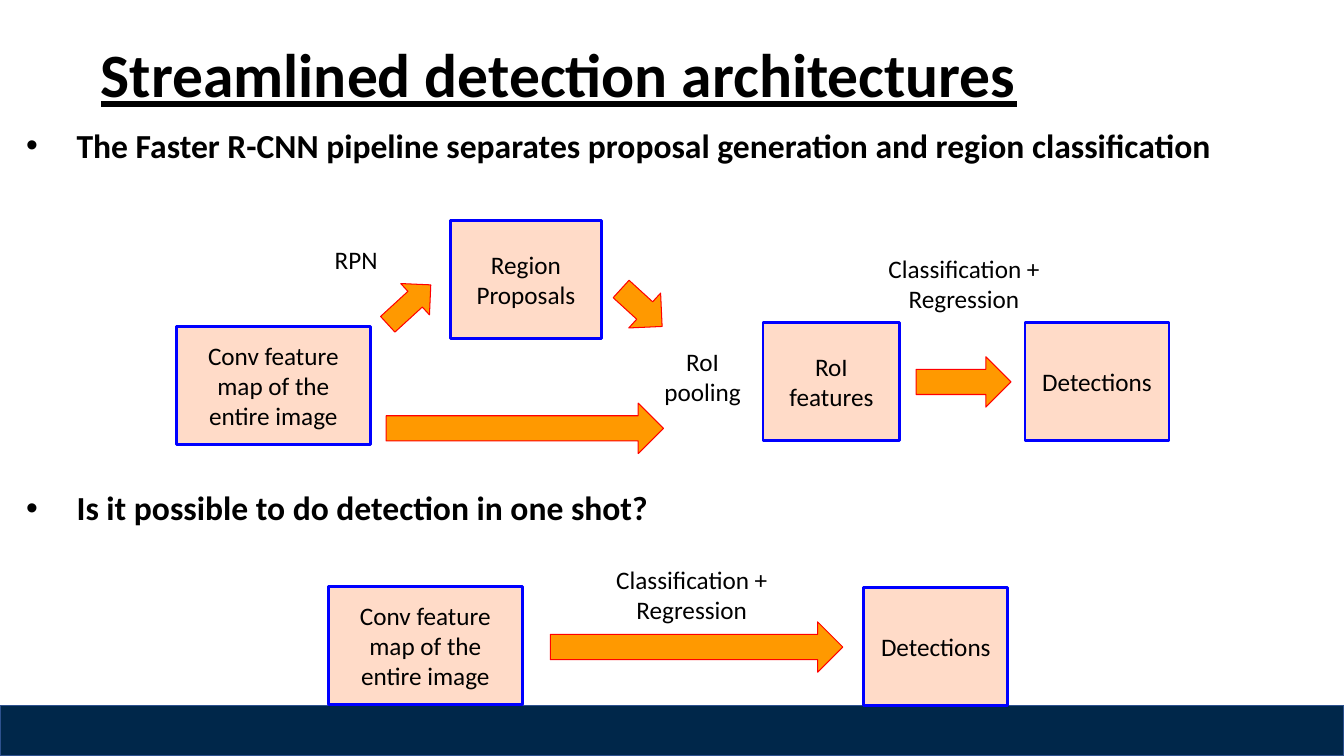
"""Build the slide on streamlined detection architectures."""
from lxml import etree
from pptx import Presentation
from pptx.dml.color import RGBColor
from pptx.enum import shapes, text
from pptx.oxml import ns
from pptx.util import Cm, Pt

BLACK = RGBColor(0, 0, 0)
NAVY = RGBColor(0x00, 0x27, 0x4A)
EDGE = RGBColor(0x2D, 0x51, 0x8E)
PEACH = RGBColor(0xFF, 0xDB, 0xC8)
BLUE = RGBColor(0x00, 0x00, 0xFF)
ORANGE = RGBColor(0xFF, 0x99, 0x00)
RED = RGBColor(0xFF, 0x00, 0x00)


def draw(kind, place, fill, line, width):
    shape = slide.shapes.add_shape(kind, *map(Cm, place))
    shape.shadow.inherit = False
    shape.fill.solid()
    shape.fill.fore_color.rgb = fill
    shape.line.color.rgb = line
    shape.line.width = Pt(width)
    return shape


def write(par, words, size, bold=False):
    run = par.add_run()
    run.text = words
    run.font.name = "Calibri"
    run.font.size = Pt(size)
    run.font.bold = bold
    run.font.color.rgb = BLACK
    return run


deck = Presentation()
deck.slide_width, deck.slide_height = Cm(33.87), Cm(19.05)
slide = deck.slides.add_slide(deck.slide_layouts[1])
title, body = slide.placeholders

for holder, place in (
    (title, (2.54, 0.91, 27.51, 1.88)),
    (body, (0.66, 3.15, 32.36, 10.26)),
):
    holder.left, holder.top, holder.width, holder.height = map(Cm, place)
    frame = holder.text_frame
    frame.margin_left = frame.margin_right = 0
    frame.margin_top = frame.margin_bottom = 0
    frame.vertical_anchor = text.MSO_ANCHOR.TOP
    frame.auto_size = text.MSO_AUTO_SIZE.NONE

head = title.text_frame.paragraphs[0]
head.alignment = text.PP_ALIGN.LEFT
write(head, "Streamlined detection architectures", 44, True).font.underline = True

first = body.text_frame.paragraphs[0]
second = body.text_frame.add_paragraph()
for par, gap, words in (
    (first, 0, "The Faster R-CNN pipeline separates proposal generation "
               "and region classification"),
    (second, 230, "Is it possible to do detection in one shot?"),
):
    props = par._p.get_or_add_pPr()
    props.set("marL", str(Cm(1.27)))
    props.set("indent", str(-Cm(1.27)))
    etree.SubElement(props, ns.qn("a:buFont")).set("typeface", "Arial")
    etree.SubElement(props, ns.qn("a:buChar")).set("char", "•")
    par.space_before = Pt(gap)
    write(par, words, 24, True)

RECT = shapes.MSO_SHAPE.RECTANGLE
draw(RECT, (0, 17.78, 33.87, 1.27), NAVY, EDGE, 1)

CONV = "Conv feature map of the entire image"
for words, left, top, wide in (
    (CONV, 4.45, 8.23, 4.88),
    ("Region Proposals", 11.35, 5.56, 3.81),
    ("RoI features", 19.23, 8.13, 3.45),
    ("Detections", 25.83, 8.13, 3.63),
    (CONV, 8.28, 14.78, 4.88),
    ("Detections", 21.77, 14.81, 3.63),
):
    box = draw(RECT, (left, top, wide, 2.97), PEACH, BLUE, 2)
    frame = box.text_frame
    frame.word_wrap = True
    frame.vertical_anchor = text.MSO_ANCHOR.MIDDLE
    frame.paragraphs[0].alignment = text.PP_ALIGN.CENTER
    write(frame.paragraphs[0], words, 18)

for turn, *place in (
    (317.5, 9.58, 7.14, 1.47, 1.07),
    (42.4, 15.47, 7.16, 1.4, 1.19),
    (0, 9.73, 10.16, 6.99, 1.27),
    (0, 23.09, 8.99, 2.39, 1.27),
    (0, 13.87, 15.67, 7.37, 1.27),
):
    arrow = draw(shapes.MSO_SHAPE.RIGHT_ARROW, place, ORANGE, RED, 0.75)
    arrow.rotation = turn

STEP = "Classification + Regression"
for words, *place in (
    ("RPN", 8.05, 6.02, 1.85, 1.02),
    ("RoI pooling", 16.31, 8.59, 2.79, 1.8),
    (STEP, 21.59, 6.25, 5.41, 1.8),
    (STEP, 13.94, 14.1, 6.99, 1.8),
):
    frame = slide.shapes.add_textbox(*map(Cm, place)).text_frame
    frame.word_wrap = words != "RPN"
    frame.paragraphs[0].alignment = text.PP_ALIGN.CENTER
    write(frame.paragraphs[0], words, 18)

deck.save("out.pptx")
